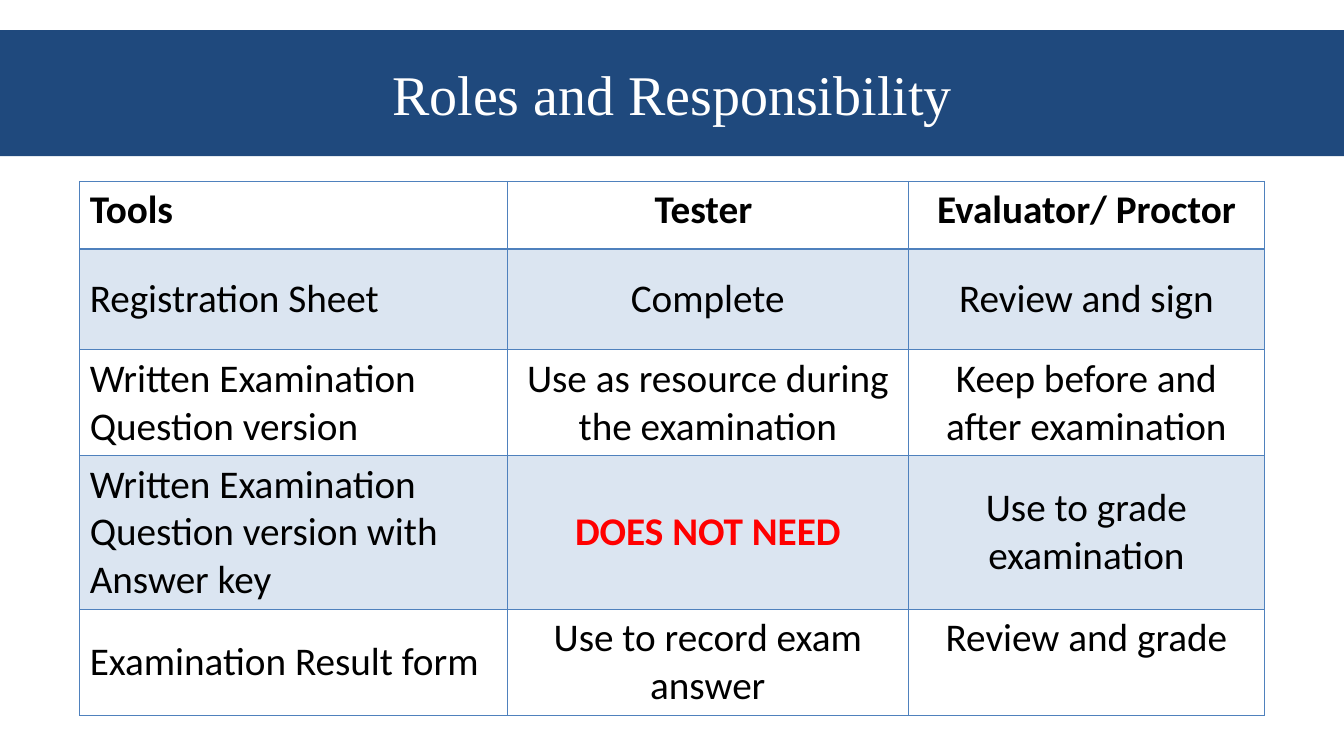
from lxml import etree
from pptx import Presentation
from pptx.dml.color import RGBColor
from pptx.enum import text
from pptx.oxml import ns
from pptx.util import Inches, Pt

COLORS = {
    "banner": "1F497D",
    "accent": "4F81BD",
    "title": "FFFFFF",
    "body": "000000",
    "warning": "FF0000",
}
WARNING = "DOES NOT NEED"
ROWS = [
    ("Tools", "Tester ", "Evaluator/ Proctor"),
    ("Registration Sheet", "Complete", "Review and sign"),
    ("Written Examination Question version",
     "Use as resource during the examination",
     "Keep before and after examination"),
    ("Written Examination Question version with Answer key",
     WARNING, "Use to grade examination"),
    ("Examination Result form", "Use to record exam answer", "Review and grade"),
]
COLUMN_WIDTHS = [4.24, 3.98, 3.53]
ROW_HEIGHTS = [0.67, 1, 1, 0.96, 1]


def color(name):
    return RGBColor.from_string(COLORS[name])


def style_font(para, name, size, color_name, bold=False):
    for span in para.runs:
        span.font.name = name
        span.font.size = Pt(size)
        span.font.bold = bold
        span.font.color.rgb = color(color_name)


def add_border(cell, side, width):
    properties = cell._tc.get_or_add_tcPr()
    line = etree.SubElement(properties, ns.qn(f"a:ln{side}"), w=str(Pt(width)))
    fill = etree.SubElement(line, ns.qn("a:solidFill"))
    etree.SubElement(fill, ns.qn("a:srgbClr"), val=COLORS["accent"])


def shade(cell, percent):
    cell.fill.solid()
    cell.fill.fore_color.rgb = color("accent")
    tint = cell._tc.tcPr.find(ns.qn("a:solidFill")).find(ns.qn("a:srgbClr"))
    etree.SubElement(tint, ns.qn("a:alpha"), val=str(percent * 1000))


def add_banner(page, box):
    banner = page.shapes.title
    banner.left, banner.top, banner.width, banner.height = map(Inches, box)
    banner.fill.solid()
    banner.fill.fore_color.rgb = color("banner")
    frame = banner.text_frame
    frame.text = "Roles and Responsibility"
    frame.vertical_anchor = text.MSO_ANCHOR.MIDDLE
    para = frame.paragraphs[0]
    para.alignment = text.PP_ALIGN.CENTER
    style_font(para, "Times New Roman", 40, "title")


def fill_cell(cell, words, row, column):
    header = row == 0
    cell.text_frame.text = words
    top_aligned = header or words == "Review and grade"
    cell.vertical_anchor = text.MSO_ANCHOR.TOP if top_aligned else text.MSO_ANCHOR.MIDDLE
    para = cell.text_frame.paragraphs[0]
    para.alignment = text.PP_ALIGN.CENTER if column else text.PP_ALIGN.LEFT
    warning = words == WARNING
    style_font(para, "Calibri", 28, "warning" if warning else "body", header or warning)
    widths = {"L": 1, "R": 1, "T": 2 if row == 1 else 1, "B": 2 if header else 1}
    for side, width in widths.items():
        add_border(cell, side, width)
    if row % 2:
        shade(cell, 20)
    else:
        cell.fill.background()


def add_roles_table(page, box):
    frame = page.shapes.add_table(len(ROWS), len(COLUMN_WIDTHS), *map(Inches, box))
    table = frame.table
    table.first_row = False
    table.horz_banding = False
    for column, width in zip(table.columns, COLUMN_WIDTHS):
        column.width = Inches(width)
    for row, height in zip(table.rows, ROW_HEIGHTS):
        row.height = Inches(height)
    for row, entries in enumerate(ROWS):
        for column, words in enumerate(entries):
            fill_cell(table.cell(row, column), words, row, column)


def main():
    deck = Presentation()
    deck.slide_width, deck.slide_height = Inches(13.33), Inches(7.5)
    page = deck.slides.add_slide(deck.slide_layouts.get_by_name("Title Only"))
    add_banner(page, (0, 0.3, 13.33, 1.25))
    add_roles_table(page, (0.79, 1.8, sum(COLUMN_WIDTHS), sum(ROW_HEIGHTS)))
    deck.save("out.pptx")


if __name__ == "__main__":
    main()
